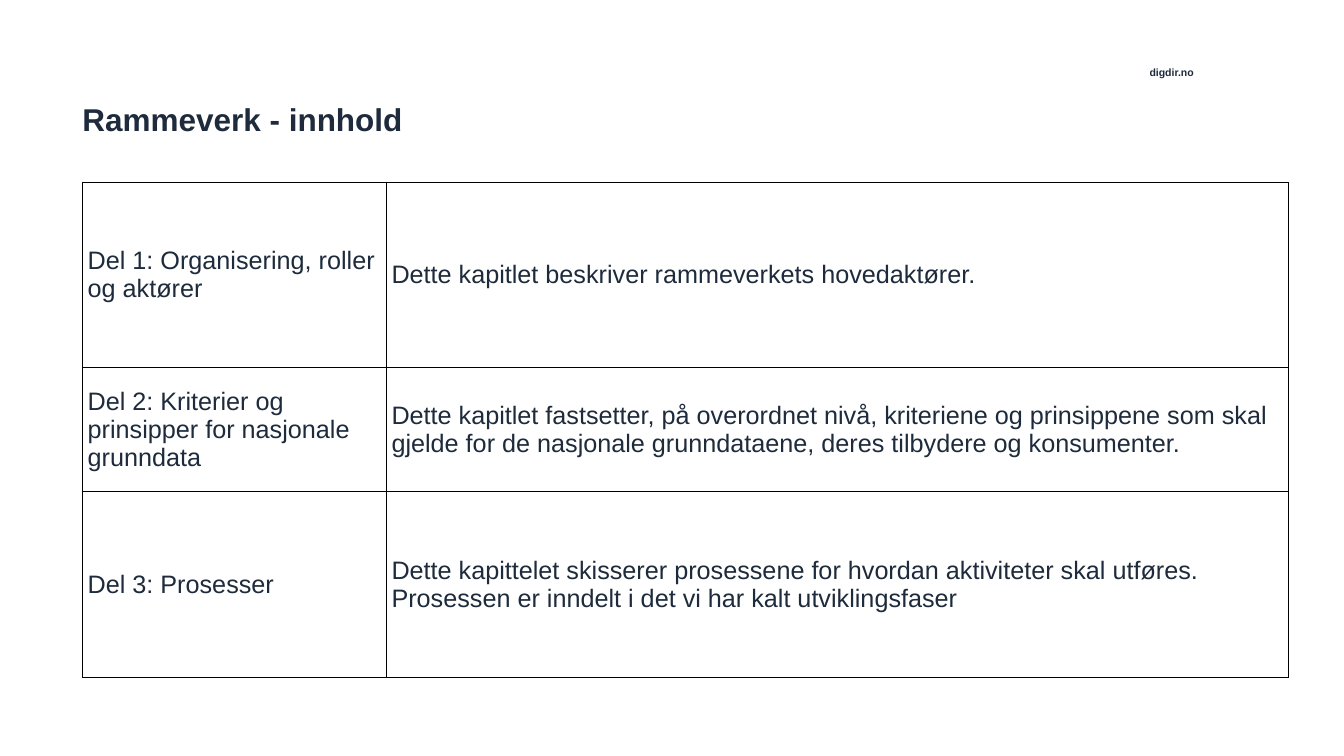
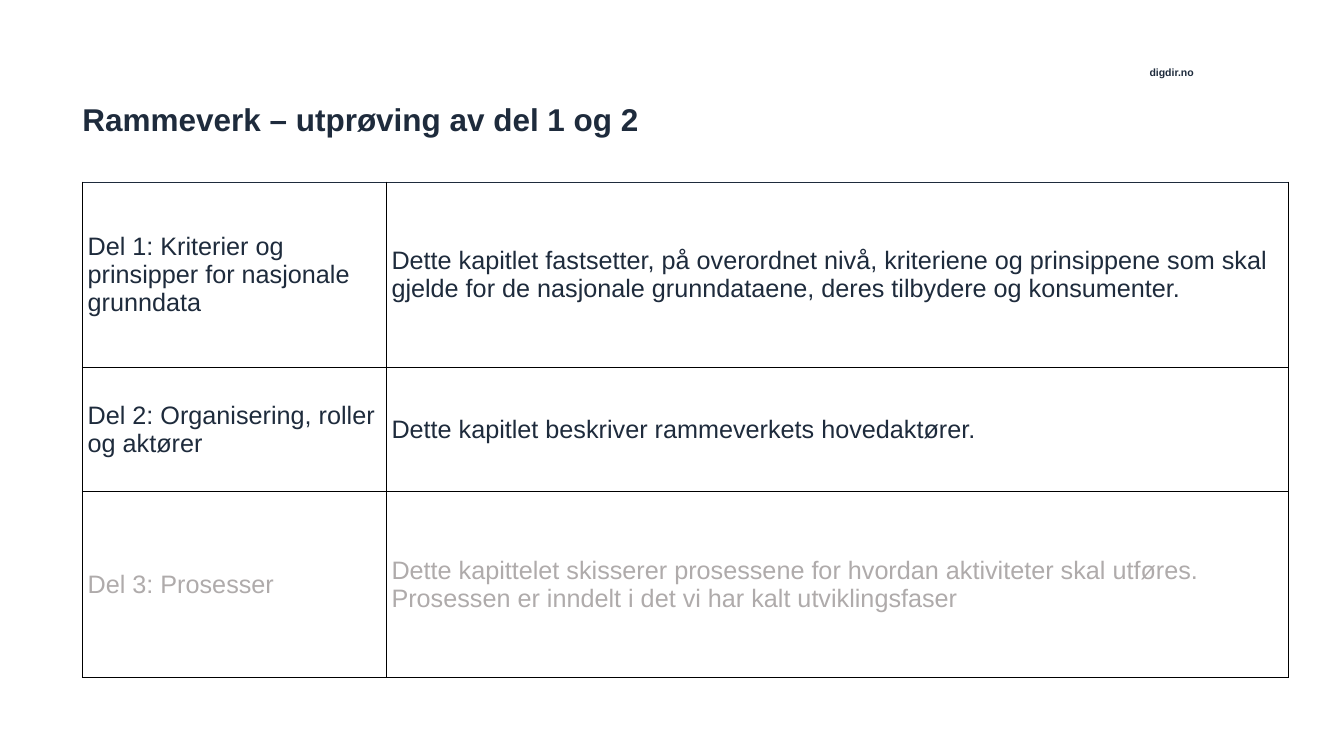
from lxml import etree
from pptx import Presentation
from pptx.dml.color import RGBColor
from pptx.enum.text import MSO_ANCHOR, MSO_AUTO_SIZE, PP_ALIGN
from pptx.oxml.ns import qn
from pptx.util import Inches, Pt

TOP, MIDDLE = MSO_ANCHOR.TOP, MSO_ANCHOR.MIDDLE
LEFT = PP_ALIGN.LEFT
NO_AUTOFIT = MSO_AUTO_SIZE.NONE

# Shared look
SLIDE_W, SLIDE_H = 17.78, 10
FONT = "Arial"
INK, MUTED, GRID_LINE = "1E2B3C", "AFABAB", "000000"
MARGIN = 1.09
TITLE_LAYOUT = 5

# Table grid: heights are shares of the table
TABLE_TOP, TABLE_H = 2.41, 6.55
COLUMN_WIDTHS = (4.02, 11.94)
ROW_SHARES = (3, 2, 3)
CELL_PADDING = 0.07

# Chapters of the framework: heading and description
ROLES = ("Organisering, roller og aktører",
         "Dette kapitlet beskriver rammeverkets hovedaktører.")
CRITERIA = ("Kriterier og prinsipper for nasjonale grunndata",
            "Dette kapitlet fastsetter, på overordnet nivå, kriteriene og "
            "prinsippene som skal gjelde for de nasjonale grunndataene, "
            "deres tilbydere og konsumenter.")
PROCESSES = ("Prosesser",
             "Dette kapittelet skisserer prosessene for hvordan aktiviteter "
             "skal utføres. Prosessen er inndelt i det vi har kalt "
             "utviklingsfaser")


def rgb(hex_color):
    return RGBColor.from_string(hex_color)


def write(frame, text, size, color=INK, bold=False, spacing=None):
    paragraph = frame.paragraphs[0]
    paragraph.alignment = LEFT
    if spacing:
        paragraph.line_spacing = spacing
    run = paragraph.add_run()
    run.text = text
    run.font.name = FONT
    run.font.size = Pt(size)
    run.font.bold = bold
    run.font.color.rgb = rgb(color)


def set_title(slide, text):
    title = slide.shapes.title
    title.left, title.top = Inches(MARGIN), Inches(1.38)
    title.width, title.height = Inches(13.45), Inches(0.76)
    frame = title.text_frame
    frame.margin_left = frame.margin_right = 0
    frame.margin_top = frame.margin_bottom = 0
    frame.vertical_anchor = TOP
    frame.auto_size = NO_AUTOFIT
    frame.word_wrap = True
    write(frame, text, 30, bold=True, spacing=0.9)


def add_web_address(slide):
    box = slide.shapes.add_textbox(Inches(15.11), Inches(0.82),
                                   Inches(1.13), Inches(0.27))
    box.text_frame.word_wrap = True
    write(box.text_frame, "digdir.no", 10, bold=True)


def set_borders(cell, top_color):
    properties = cell._tc.get_or_add_tcPr()
    colors = {"lnL": GRID_LINE, "lnR": GRID_LINE,
              "lnT": top_color, "lnB": GRID_LINE}
    for position, (side, color) in enumerate(colors.items()):
        line = etree.Element(qn(f"a:{side}"), w=str(Pt(1)))
        fill = etree.SubElement(line, qn("a:solidFill"))
        etree.SubElement(fill, qn("a:srgbClr"), val=color)
        properties.insert(position, line)


def fill_cell(cell, text, color, top_color):
    cell.fill.background()
    cell.vertical_anchor = MIDDLE
    cell.margin_left = cell.margin_right = Inches(CELL_PADDING)
    cell.margin_top = cell.margin_bottom = 0
    write(cell.text_frame, text, 24, color=color)
    set_borders(cell, top_color)


def add_chapter_table(slide, chapters, muted_parts, outer_top):
    table = slide.shapes.add_table(
        len(chapters), len(COLUMN_WIDTHS), Inches(MARGIN), Inches(TABLE_TOP),
        Inches(sum(COLUMN_WIDTHS)), Inches(TABLE_H)).table
    table.first_row = table.horz_banding = False
    for column, width in zip(table.columns, COLUMN_WIDTHS):
        column.width = Inches(width)
    for row, share in zip(table.rows, ROW_SHARES):
        row.height = Inches(TABLE_H * share / sum(ROW_SHARES))

    for part, (heading, description) in enumerate(chapters, start=1):
        color = MUTED if part in muted_parts else INK
        top_color = outer_top if part == 1 else GRID_LINE
        texts = (f"Del {part}: {heading}", description)
        for cell, text in zip(table.rows[part - 1].cells, texts):
            fill_cell(cell, text, color, top_color)


def add_framework_slide(deck, title, chapters, muted_parts=(),
                        outer_top=GRID_LINE):
    slide = deck.slides.add_slide(deck.slide_layouts[TITLE_LAYOUT])
    add_web_address(slide)
    add_chapter_table(slide, chapters, muted_parts, outer_top)
    set_title(slide, title)


def main():
    deck = Presentation()
    deck.slide_width, deck.slide_height = Inches(SLIDE_W), Inches(SLIDE_H)

    # Contents of the framework
    add_framework_slide(deck, "Rammeverk - innhold",
                        (ROLES, CRITERIA, PROCESSES))

    # Trial of parts 1 and 2, with part 3 toned down
    add_framework_slide(deck, "Rammeverk – utprøving av del 1 og 2",
                        (CRITERIA, ROLES, PROCESSES),
                        muted_parts=(3,), outer_top=INK)

    deck.save("out.pptx")


if __name__ == "__main__":
    main()
